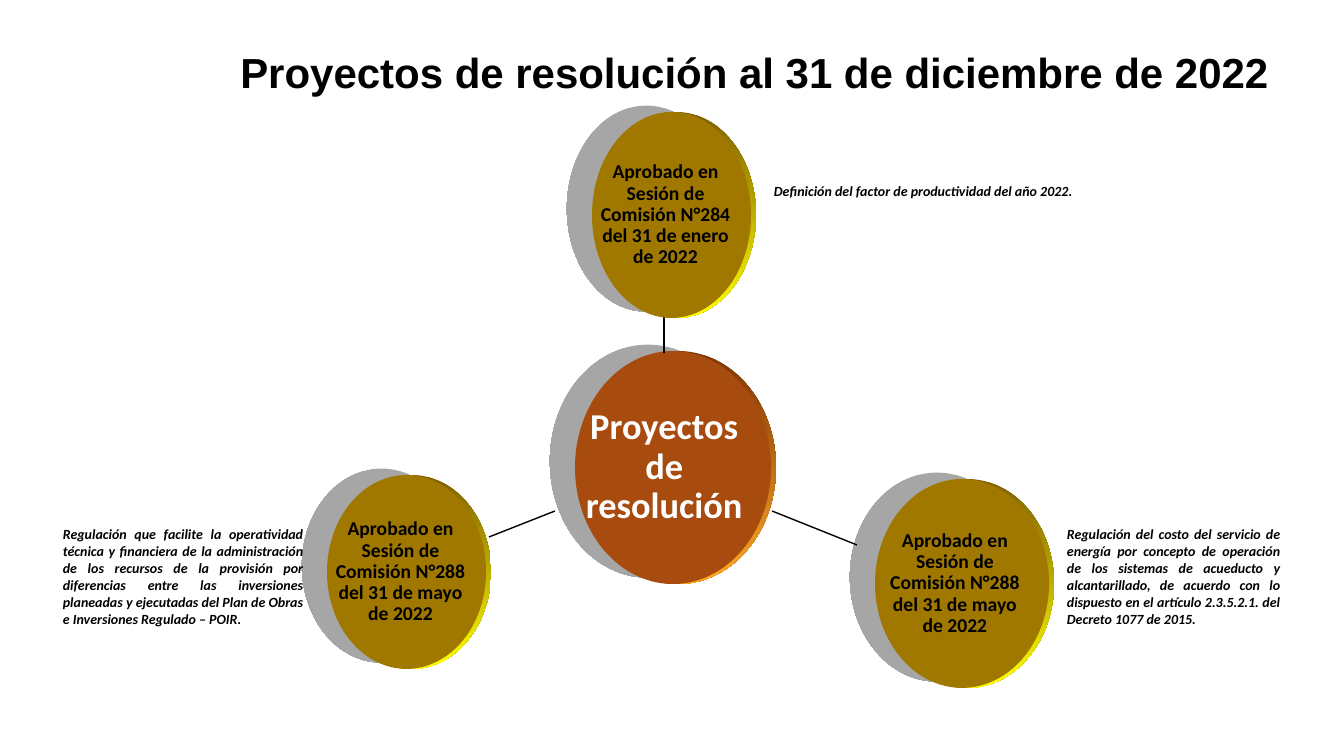
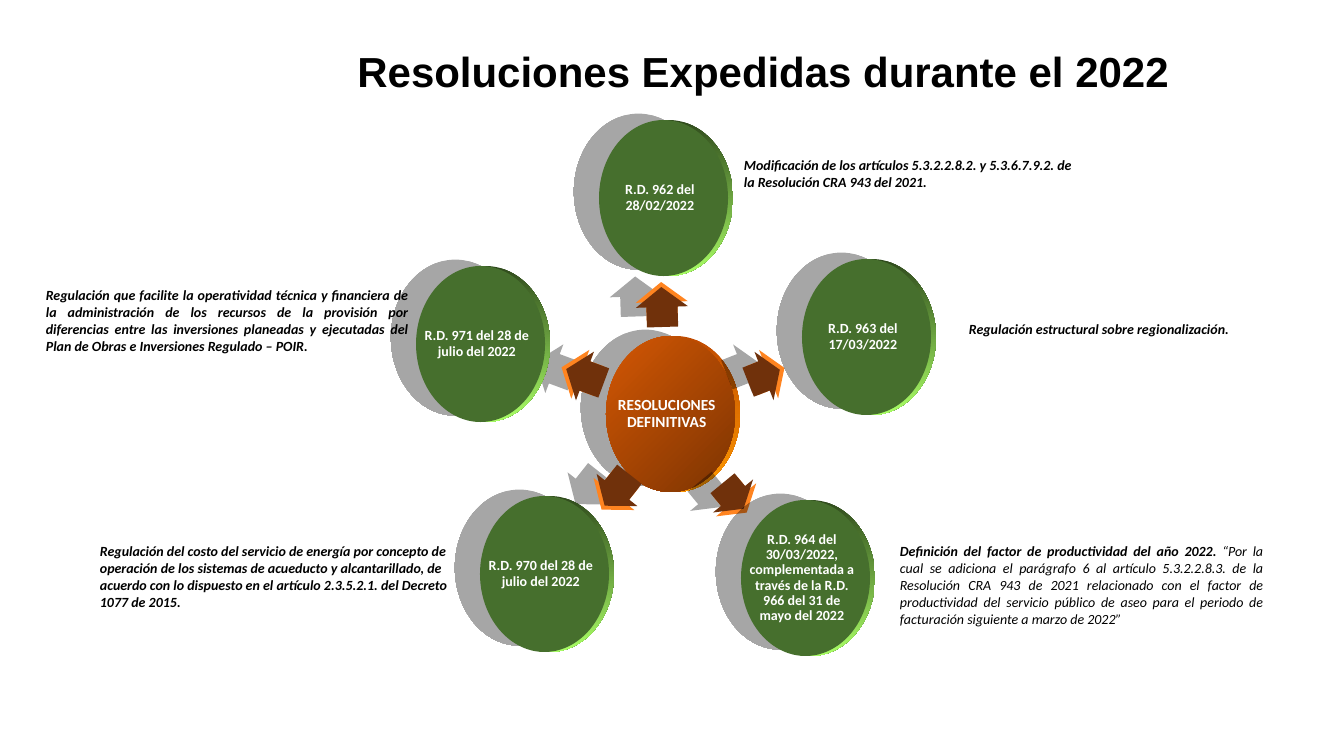
"""Two radial diagrams about draft and issued resolutions, saved as a presentation."""
from dataclasses import dataclass
from math import cos, radians, sin

from lxml.etree import SubElement
from pptx import Presentation
from pptx.dml.color import RGBColor
from pptx.enum.shapes import MSO_CONNECTOR, MSO_SHAPE
from pptx.enum.text import MSO_ANCHOR, PP_ALIGN
from pptx.oxml.ns import qn
from pptx.util import Emu, Pt

EMU_PER_INCH = 914400
PX_PER_INCH = 100.8
BLACK, WHITE = "000000", "FFFFFF"
ARROW_FRONT, ARROW_EDGE = "70310B", "FF8420"
EDGE_DEPTH = 5
LABEL_SHIFT = 6

TITLE_FORMAT = {"size": Pt(30), "name": "Arial", "bold": True}
NOTE_FORMAT = {"size": Pt(10), "name": "Calibri", "bold": True, "italic": True}


@dataclass(frozen=True)
class DiscStyle:
    front: tuple[str, ...]
    edge: tuple[str, ...]
    text: str
    size: int


@dataclass(frozen=True)
class Disc:
    left: int
    top: int
    width: int
    height: int
    label: str
    style: DiscStyle


@dataclass(frozen=True)
class Arrow:
    center_x: int
    center_y: int
    length: int
    angle: float
    breadth: int = 52


@dataclass(frozen=True)
class Spoke:
    start_x: int
    start_y: int
    end_x: int
    end_y: int


@dataclass(frozen=True)
class Note:
    left: int
    top: int
    width: int
    height: int
    text: str
    plain_ending: str = ""
    align: PP_ALIGN = PP_ALIGN.JUSTIFY


@dataclass(frozen=True)
class Branch:
    link: Spoke | Arrow
    disc: Disc


@dataclass(frozen=True)
class Diagram:
    title: str
    title_box: tuple[int, int, int, int]
    hub: Disc
    branches: list[Branch]
    notes: list[Note]


DRAFT_HUB = DiscStyle(("A84B0E",), ("7D3402", "FFA826"), WHITE, 26)
DRAFT = DiscStyle(("A07800",), ("7F6000", "FFFF00"), BLACK, 14)
ISSUED_HUB = DiscStyle(("D35704", "7D3402"), ("C04A00", "FF9A00"), WHITE, 11)
ISSUED = DiscStyle(("466F2D",), ("2F4A1C", "AAFF66"), WHITE, 10)

POIR = ("Regulación que facilite la operatividad técnica y financiera de la administración "
        "de los recursos de la provisión por diferencias entre las inversiones planeadas y "
        "ejecutadas del Plan de Obras e Inversiones Regulado – POIR.")
ENERGY = ("Regulación del costo del servicio de energía por concepto de operación de los "
          "sistemas de acueducto y alcantarillado, de acuerdo con lo dispuesto en el "
          "artículo 2.3.5.2.1. del Decreto 1077 de 2015.")
PRODUCTIVITY = "Definición del factor de productividad del año 2022."
PARAGRAPH_SIX = ("“Por la cual se adiciona el parágrafo 6 al artículo 5.3.2.2.8.3. de la "
                 "Resolución CRA 943 de 2021 relacionado con el factor de productividad del "
                 "servicio público de aseo para el periodo de facturación siguiente a marzo "
                 "de 2022”")


def approved(session: int, date: str) -> str:
    """Word the approval of a draft."""
    return f"Aprobado en Sesión de Comisión N°{session} del {date} de 2022"


def issued(left: int, top: int, label: str, style: DiscStyle = ISSUED) -> Disc:
    """Make a disc of the common size of the issued resolutions."""
    return Disc(left, top, 129, 156, label, style)


DIAGRAMS = [
    Diagram(
        "Proyectos de resolución al 31 de diciembre de 2022",
        (183, 42, 1144, 61),
        Disc(575, 351, 196, 233, "Proyectos de resolución", DRAFT_HUB),
        [
            Branch(Spoke(772, 511, 857, 545),
                   Disc(875, 479, 174, 209, approved(288, "31 de mayo"), DRAFT)),
            Branch(Spoke(664, 353, 664, 317),
                   Disc(592, 112, 159, 206, approved(284, "31 de enero"), DRAFT)),
            Branch(Spoke(555, 511, 489, 537),
                   Disc(327, 475, 159, 194, approved(288, "31 de mayo"), DRAFT)),
        ],
        [
            Note(53, 521, 260, 112, POIR),
            Note(764, 178, 376, 27, PRODUCTIVITY),
            Note(1057, 521, 233, 112, ENERGY),
        ],
    ),
    Diagram(
        "Resoluciones Expedidas durante el 2022",
        (184, 41, 1159, 61),
        issued(606, 336, "RESOLUCIONES DEFINITIVAS", ISSUED_HUB),
        [
            Branch(Arrow(662, 307, 40, 268.2), issued(599, 120, "R.D. 962 del 28/02/2022")),
            Branch(Arrow(764, 376, 34, 338.5), issued(802, 259, "R.D. 963 del 17/03/2022")),
            Branch(Arrow(733, 496, 33, 50.5),
                   issued(741, 500, "R.D. 964 del 30/03/2022, complementada a través de "
                                    "la R.D. 966 del 31 de mayo del 2022")),
            Branch(Arrow(617, 490, 40, 128.3),
                   issued(480, 496, "R.D. 970 del 28 de julio del 2022")),
            Branch(Arrow(585, 376, 40, 200.3),
                   issued(416, 266, "R.D. 971 del 28 de julio del 2022")),
        ],
        [
            Note(36, 282, 382, 78, POIR),
            Note(90, 538, 395, 78, ENERGY, align=PP_ALIGN.LEFT),
            Note(959, 316, 401, 27, "Regulación estructural sobre regionalización."),
            Note(734, 152, 348, 44, "Modificación de los artículos 5.3.2.2.8.2. y "
                 "5.3.6.7.9.2. de la Resolución CRA 943 del 2021.", align=PP_ALIGN.LEFT),
            Note(890, 538, 383, 95, PRODUCTIVITY + " ", PARAGRAPH_SIX),
        ],
    ),
]


def px(length: float) -> Emu:
    """Turn pixels into EMU."""
    return Emu(round(length * EMU_PER_INCH / PX_PER_INCH))


def rgb(value: str) -> RGBColor:
    """Read a hex colour."""
    return RGBColor.from_string(value)


def paint(fill, colors: tuple[str, ...], angle: int) -> None:
    """Fill with one colour, or with a gradient of two."""
    if len(colors) == 1:
        fill.solid()
        fill.fore_color.rgb = rgb(colors[0])
        return
    fill.gradient()
    fill.gradient_angle = angle
    for stop, color in zip(fill.gradient_stops, colors):
        stop.color.rgb = rgb(color)


def add_solid(slide, kind, box, colors: tuple[str, ...], angle: int = 270):
    """Add a preset shape with no line and no shadow."""
    solid = slide.shapes.add_shape(kind, *map(px, box))
    solid.shadow.inherit = False
    paint(solid.fill, colors, angle)
    solid.line.fill.background()
    return solid


def cast_shadow(solid, distance: int) -> None:
    """Give a shape a flat grey shadow on its upper left."""
    effects = solid._element.spPr.find(qn("a:effectLst"))
    shadow = SubElement(effects, qn("a:outerShdw"), blurRad="0", dist=str(Pt(distance)),
                        dir=str(192 * 60000), algn="tl", rotWithShape="0")
    black = SubElement(shadow, qn("a:srgbClr"), val=BLACK)
    SubElement(black, qn("a:alpha"), val="35000")


def add_run(paragraph, text: str, formats: dict, color: str) -> None:
    """Add a formatted run."""
    run = paragraph.add_run()
    run.text = text
    for attribute, value in formats.items():
        setattr(run.font, attribute, value)
    run.font.color.rgb = rgb(color)


def add_text(slide, box, align: PP_ALIGN):
    """Add a wrapping text box and return its frame and paragraph."""
    frame = slide.shapes.add_textbox(*map(px, box)).text_frame
    frame.word_wrap = True
    paragraph = frame.paragraphs[0]
    paragraph.alignment = align
    return frame, paragraph


def add_disc(slide, disc: Disc) -> None:
    """Draw a thick disc with its shadow and label."""
    style = disc.style
    edge = add_solid(slide, MSO_SHAPE.OVAL,
                     (disc.left + EDGE_DEPTH, disc.top, disc.width, disc.height), style.edge)
    cast_shadow(edge, 22)
    add_solid(slide, MSO_SHAPE.OVAL, (disc.left, disc.top, disc.width, disc.height),
              style.front, 315)
    label_box = (disc.left + LABEL_SHIFT, disc.top + 0.15 * disc.height,
                 0.85 * disc.width, 0.7 * disc.height)
    frame, paragraph = add_text(slide, label_box, PP_ALIGN.CENTER)
    frame.vertical_anchor = MSO_ANCHOR.MIDDLE
    for side in ("left", "top", "right", "bottom"):
        setattr(frame, f"margin_{side}", px(1))
    paragraph.line_spacing = 0.9
    add_run(paragraph, disc.label,
            {"size": Pt(style.size), "name": "Calibri", "bold": True}, style.text)


def add_arrow(slide, arrow: Arrow) -> None:
    """Draw a thick arrow whose edge shows on its pointing side."""
    heading = radians(arrow.angle)
    for depth, color in ((EDGE_DEPTH, ARROW_EDGE), (0, ARROW_FRONT)):
        box = (arrow.center_x - arrow.length / 2 + depth * cos(heading),
               arrow.center_y - arrow.breadth / 2 + depth * sin(heading),
               arrow.length, arrow.breadth)
        layer = add_solid(slide, MSO_SHAPE.RIGHT_ARROW, box, (color,))
        layer.adjustments[0] = 0.6
        layer.adjustments[1] = 0.5
        layer.rotation = arrow.angle
        if depth:
            cast_shadow(layer, 19)


def add_spoke(slide, spoke: Spoke) -> None:
    """Draw a thin line between the hub and a disc."""
    ends = (spoke.start_x, spoke.start_y, spoke.end_x, spoke.end_y)
    line = slide.shapes.add_connector(MSO_CONNECTOR.STRAIGHT, *map(px, ends))
    line.line.color.rgb = rgb(BLACK)
    line.line.width = Pt(1)
    SubElement(line._element.spPr, qn("a:effectLst"))


def add_note(slide, note: Note) -> None:
    """Write the description beside a disc."""
    box = (note.left, note.top, note.width, note.height)
    _, paragraph = add_text(slide, box, note.align)
    add_run(paragraph, note.text, NOTE_FORMAT, BLACK)
    if note.plain_ending:
        add_run(paragraph, note.plain_ending, NOTE_FORMAT | {"bold": False}, BLACK)


def add_diagram(deck, diagram: Diagram) -> None:
    """Add a slide with its title, hub, branches and notes."""
    slide = deck.slides.add_slide(deck.slide_layouts[6])
    _, heading = add_text(slide, diagram.title_box, PP_ALIGN.CENTER)
    add_run(heading, diagram.title, TITLE_FORMAT, BLACK)
    add_disc(slide, diagram.hub)
    for branch in diagram.branches:
        if isinstance(branch.link, Arrow):
            add_arrow(slide, branch.link)
        else:
            add_spoke(slide, branch.link)
        add_disc(slide, branch.disc)
    for note in diagram.notes:
        add_note(slide, note)


def main() -> None:
    """Build and save the deck."""
    deck = Presentation()
    deck.slide_width, deck.slide_height = px(1344), px(756)
    for diagram in DIAGRAMS:
        add_diagram(deck, diagram)
    deck.save("out.pptx")


if __name__ == "__main__":
    main()
